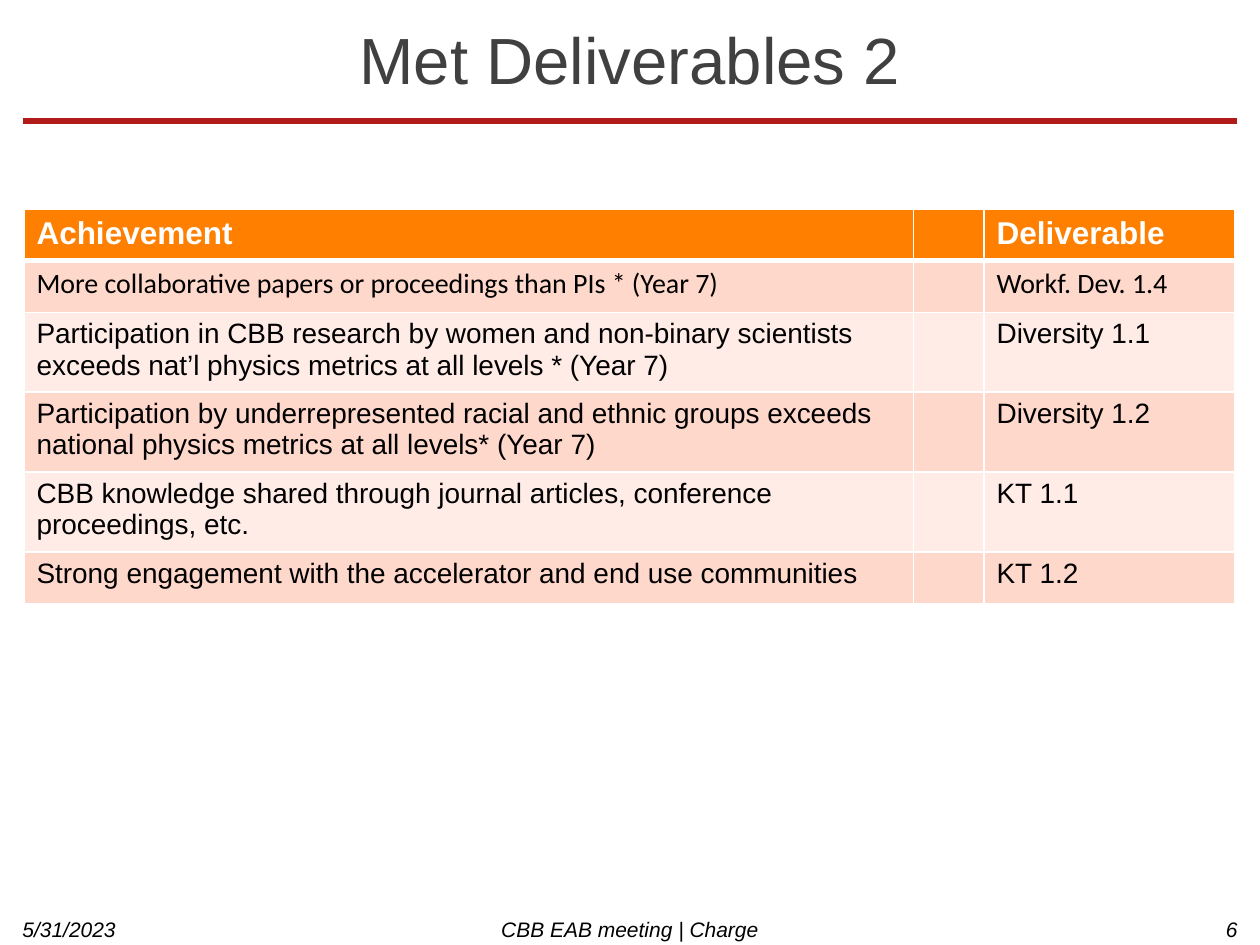
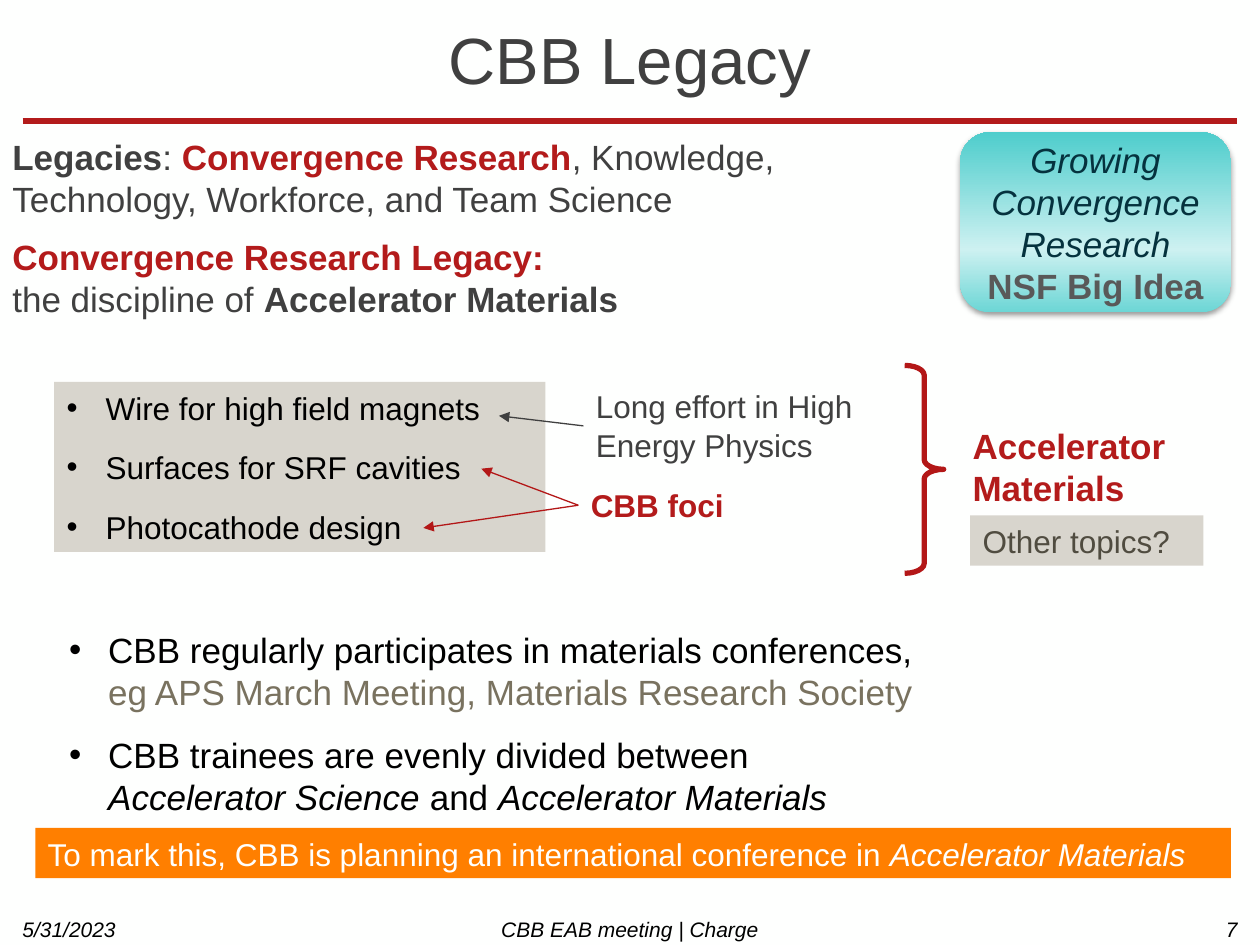
import copy
from dataclasses import dataclass
from typing import Any, NamedTuple

import pptx
import pptx.dml.color
import pptx.enum.shapes
import pptx.enum.text
import pptx.oxml
import pptx.oxml.ns
import pptx.util

SCALE = 9144
RED, ROSE, ORANGE, WHITE = "B31B1B", "B31717", "FF7F00", "FEFFFE"
GRAY, BLACK, STONE = "404040", "000000", "D8D5CD"
NS = 'xmlns:a="http://schemas.openxmlformats.org/drawingml/2006/main"'
KIND = pptx.enum.shapes.MSO_SHAPE
SIDE = pptx.enum.text.PP_ALIGN
MID = pptx.enum.text.MSO_ANCHOR.MIDDLE
TOP = pptx.enum.text.MSO_ANCHOR.TOP


class Bit(NamedTuple):
    text: str
    color: str = BLACK
    bold: bool = False
    slant: bool = False
    font: str = "Arial"


@dataclass
class Box:
    place: tuple[int, int, int, int]
    paras: list[list[Bit]]
    size: float = 18
    lead: int | None = 22
    gap: int = 0
    bullet: bool = False
    fill: str | None = None
    kind: Any = None
    side: Any = SIDE.LEFT
    anchor: Any = TOP


class Line(NamedTuple):
    start: tuple[int, int]
    end: tuple[int, int]
    color: str
    width: float = 0.75
    arrow: bool = True


def px(*vals: int) -> list[int]:
    return [val * SCALE for val in vals]


def tint(code: str) -> pptx.dml.color.RGBColor:
    return pptx.dml.color.RGBColor.from_string(code)


def node(xml: str) -> Any:
    return pptx.oxml.parse_xml(xml)


def apply(item: Any, look: dict[str, Any]) -> None:
    for name, val in look.items():
        setattr(item, name, val)


def paint(fill: Any, code: str) -> None:
    fill.solid()
    fill.fore_color.rgb = tint(code)


def write(para: Any, bits: list[Bit], size: float) -> None:
    for bit in bits:
        for num, part in enumerate(bit.text.split("\n")):
            if num:
                para.add_line_break()
            if part:
                run = para.add_run()
                run.text = part
                apply(run.font, {"name": bit.font, "size": pptx.util.Pt(size),
                                 "bold": bit.bold, "italic": bit.slant})
                run.font.color.rgb = tint(bit.color)


def dot(para: Any) -> None:
    props = para._p.get_or_add_pPr()
    props.set("marL", str(31 * SCALE))
    props.set("indent", str(-31 * SCALE))
    props.append(node(f'<a:buFont {NS} typeface="Arial"/>'))
    props.append(node(f'<a:buChar {NS} char="•"/>'))


def draw(slide: Any, box: Box) -> Any:
    if box.kind is None:
        shape = slide.shapes.add_textbox(*px(*box.place))
    else:
        shape = slide.shapes.add_shape(box.kind, *px(*box.place))
        shape.shadow.inherit = False
        shape.line.fill.background()
    if box.fill:
        paint(shape.fill, box.fill)
    frame = shape.text_frame
    apply(frame, {"word_wrap": True, "vertical_anchor": box.anchor})
    for num, bits in enumerate(box.paras):
        para = frame.add_paragraph() if num else frame.paragraphs[0]
        if box.bullet:
            dot(para)
        look = {"alignment": box.side}
        if box.lead:
            look["line_spacing"] = pptx.util.Pt(box.lead)
        if num:
            look["space_before"] = pptx.util.Pt(box.gap)
        apply(para, look)
        write(para, bits, box.size)
    return shape


def link(slide: Any, line: Line) -> None:
    shape = slide.shapes.add_connector(
        pptx.enum.shapes.MSO_CONNECTOR.STRAIGHT, *px(*line.start, *line.end))
    shape.line.color.rgb = tint(line.color)
    shape.line.width = pptx.util.Pt(line.width)
    if line.arrow:
        shape.line._get_or_add_ln().append(node(f'<a:tailEnd {NS} type="triangle"/>'))
    shape._element.spPr.append(node(f"<a:effectLst {NS}/>"))


def start(deck: Any, title: str, page: int) -> Any:
    slide = deck.slides.add_slide(deck.slide_layouts[6])
    paint(slide.background.fill, WHITE)
    link(slide, Line((18, 96), (982, 96), RED, 3, False))
    draw(slide, Box((0, 0, 1000, 93), [[Bit(title, GRAY)]], 37.3, None,
                    side=SIDE.CENTER, anchor=MID))
    feet = [(8, 217, "5/31/2023", SIDE.LEFT),
            (200, 600, "CBB EAB meeting | Charge", SIDE.CENTER),
            (917, 75, str(page), SIDE.RIGHT)]
    for left, width, text, side in feet:
        draw(slide, Box((left, 725, width, 25), [[Bit(text, slant=True)]], 12, None,
                        side=side, anchor=MID))
    return slide


def edge(cell: Any, widths: dict[str, int]) -> None:
    props = cell._tc.get_or_add_tcPr()
    for num, (name, width) in enumerate(widths.items()):
        props.insert(num, node(
            f'<a:ln{name} {NS} w="{width * 12700}"><a:solidFill>'
            f'<a:srgbClr val="{WHITE}"/></a:solidFill></a:ln{name}>'))


def goals(slide: Any) -> None:
    rows = [
        ("Achievement", "Deliverable"),
        ("More collaborative papers or proceedings than PIs * (Year 7)", "Workf. Dev. 1.4"),
        ("Participation in CBB research by women and non-binary scientists "
         "exceeds nat’l physics metrics at all levels * (Year 7)", "Diversity 1.1"),
        ("Participation by underrepresented racial and ethnic groups exceeds "
         "national physics metrics at all levels* (Year 7)", "Diversity 1.2"),
        ("CBB knowledge shared through journal articles, conference "
         "proceedings, etc.", "KT 1.1"),
        ("Strong engagement with the accelerator and end use communities", "KT 1.2"),
    ]
    highs = [41, 41, 59, 59, 59, 41]
    wides = [706, 56, 199]
    grid = slide.shapes.add_table(len(rows), len(wides),
                                  *px(19, 166, sum(wides), sum(highs))).table
    apply(grid, {"first_row": False, "horz_banding": False})
    for col, wide in zip(grid.columns, px(*wides)):
        col.width = wide
    for num, (left, right) in enumerate(rows):
        grid.rows[num].height = highs[num] * SCALE
        head = num == 0
        back = ORANGE if head else ("FFECE7", "FFD8CC")[num % 2]
        font = "Calibri" if num == 1 else "Arial"
        for spot, text in enumerate((left, "", right)):
            cell = grid.cell(num, spot)
            paint(cell.fill, back)
            edge(cell, {"L": 1, "R": 1, "T": 3 if num == 1 else 1, "B": 3 if head else 1})
            if text:
                write(cell.text_frame.paragraphs[0],
                      [Bit(text, WHITE if head else BLACK, head, font=font)],
                      18 if head else 16)


def badge(slide: Any) -> None:
    shape = draw(slide, Box(
        (762, 105, 215, 143),
        [[Bit("Growing Convergence Research\n", "05323E", slant=True),
          Bit("NSF Big Idea", "595959", True)]],
        20, 24, kind=KIND.ROUNDED_RECTANGLE, side=SIDE.CENTER, anchor=MID))
    shape.fill.gradient()
    shape.fill.gradient_angle = 90
    stops = next(shape._element.iter(pptx.oxml.ns.qn("a:gsLst")))
    stops.append(copy.deepcopy(stops[0]))
    shades = [(0, "6CD6D5"), (0.35, "CDF1F1"), (1, "4ECDCC")]
    for stop, (place, code) in zip(shape.fill.gradient_stops, shades):
        stop.color.rgb = tint(code)
        stop.position = place
    glow = next(shape._element.iter(pptx.oxml.ns.qn("a:effectLst")))
    glow.append(node(
        f'<a:outerShdw {NS} blurRad="40000" dist="20000" dir="5400000" rotWithShape="0">'
        '<a:srgbClr val="000000"><a:alpha val="38000"/></a:srgbClr></a:outerShdw>'))


def brace(slide: Any) -> None:
    shape = slide.shapes.add_shape(KIND.RIGHT_BRACE, *px(718, 290, 31, 165))
    shape.shadow.inherit = False
    shape.fill.background()
    shape.line.color.rgb = tint(ROSE)
    shape.line.width = pptx.util.Pt(3)
    shape.adjustments[0] = 0.25
    shape.adjustments[1] = 0.5


def legacy(slide: Any) -> None:
    topics = ["Wire for high field magnets", "Surfaces for SRF cavities", "Photocathode design"]
    boxes = [
        Box((0, 103, 1000, 160), [
            [Bit("Legacies", GRAY, True), Bit(": ", GRAY),
             Bit("Convergence Research", RED, True),
             Bit(", Knowledge,\nTechnology, Workforce, and Team Science", GRAY)],
            [Bit("Convergence Research Legacy:\n", RED, True),
             Bit("the discipline of ", GRAY), Bit("Accelerator Materials", GRAY, True)],
        ], 20, 24, 9),
        Box((45, 494, 932, 162), [
            [Bit("CBB regularly participates in materials conferences,\n"),
             Bit("eg APS March Meeting, Materials Research Society", "79725F")],
            [Bit("CBB trainees are evenly divided between\n"),
             Bit("Accelerator Science ", slant=True), Bit("and "),
             Bit("Accelerator Materials", slant=True)],
        ], 20, 24, 12, True),
        Box((28, 657, 949, 40), [
            [Bit("To mark this, CBB is planning an international conference in ", WHITE),
             Bit("Accelerator Materials", WHITE, slant=True)],
        ], fill=ORANGE, kind=KIND.RECTANGLE),
        Box((43, 303, 390, 135), [[Bit(topic)] for topic in topics],
            gap=12, bullet=True, fill=STONE, kind=KIND.RECTANGLE),
        Box((459, 380, 265, 40), [[Bit("CBB foci", RED, True)]]),
        Box((463, 302, 225, 71), [[Bit("Long effort in High Energy Physics", GRAY)]]),
        Box((762, 332, 185, 77), [[Bit("Accelerator Materials", RED, True)]], 20, 24),
        Box((770, 409, 185, 40), [[Bit("Other topics?", "504C40")]],
            fill=STONE, kind=KIND.RECTANGLE),
    ]
    for box in boxes:
        draw(slide, box)
    badge(slide)
    brace(slide)
    for line in (Line((463, 338), (396, 330), GRAY),
                 Line((459, 401), (382, 372), ROSE),
                 Line((459, 401), (336, 419), ROSE)):
        link(slide, line)


def main() -> None:
    deck = pptx.Presentation()
    apply(deck, {"slide_width": 1000 * SCALE, "slide_height": 750 * SCALE})
    goals(start(deck, "Met Deliverables 2", 6))
    legacy(start(deck, "CBB Legacy", 7))
    deck.save("out.pptx")


if __name__ == "__main__":
    main()
